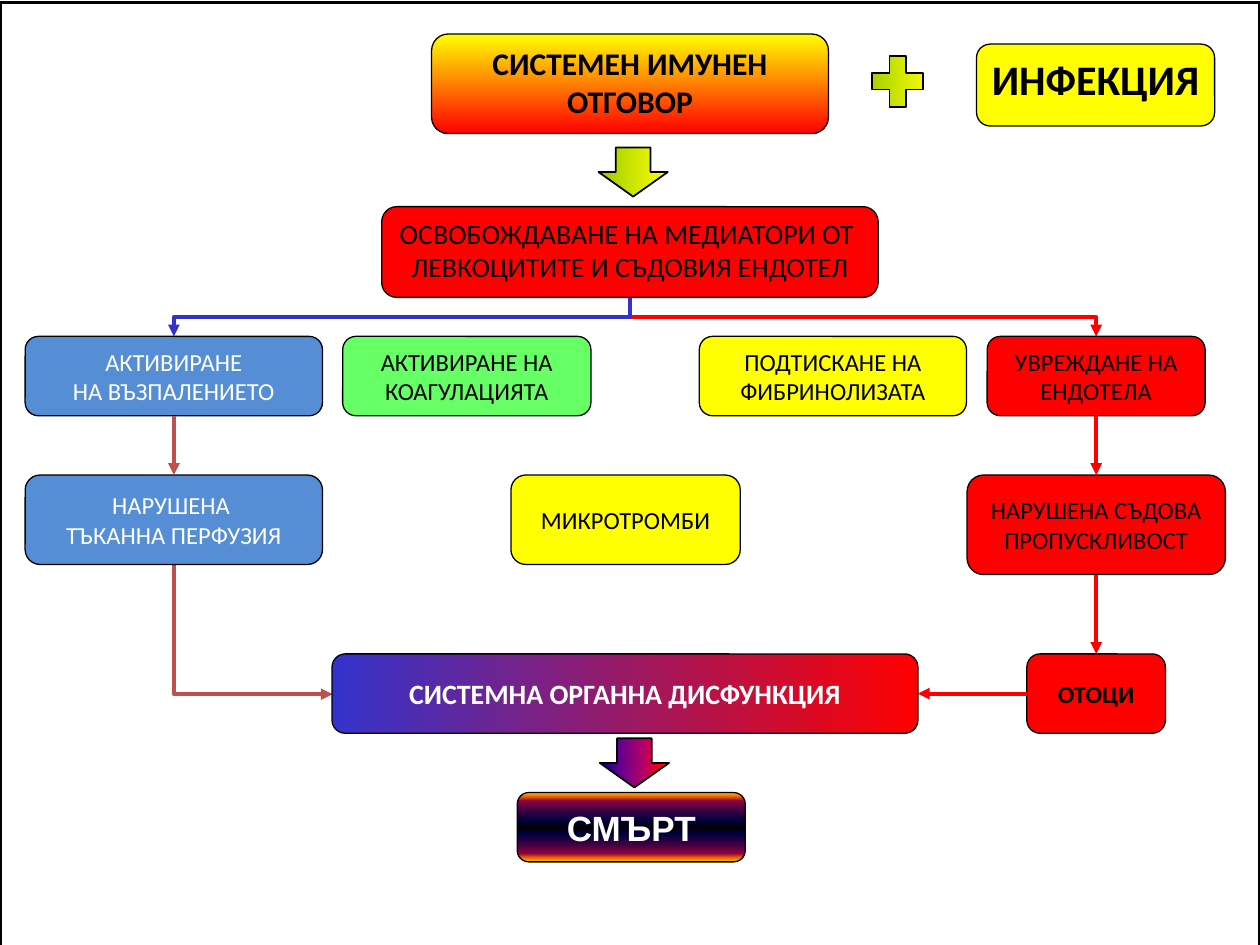
import pptx
import pptx.util
import pptx.dml.color
import pptx.enum.shapes
import pptx.enum.text
import pptx.oxml.ns
import lxml.etree

KIND = pptx.enum.shapes.MSO_SHAPE
LINK = pptx.enum.shapes.MSO_CONNECTOR
ALIGN = pptx.enum.text.PP_ALIGN
ANCHOR = pptx.enum.text.MSO_ANCHOR
qn = pptx.oxml.ns.qn

BLACK, WHITE, RED, YELLOW = "000000", "FFFFFF", "FF0000", "FFFF00"
BLUE, GREEN, INDIGO, BRICK = "558ED5", "66FF66", "3333CC", "C0504D"
LIME = [(0, "99CC00"), (100, YELLOW)]
FLAME = [(0, YELLOW), (100, RED)]
FAIL = [(0, INDIGO), (100, RED)]
DUSK = [(0, "000082"), (30, "66008F"), (65, "BA0066"), (90, RED), (100, "FF8200")]
EDGE = [(0, "FFBF00"), (5, "F27300"), (12, "8F0040"), (25, "400040"), (40, "000040")]
DEATH = EDGE + [(50, BLACK)] + [(100 - at, tone) for at, tone in reversed(EDGE)]


def color(code):
    return pptx.dml.color.RGBColor.from_string(code)


class Chart:
    """Flow chart on a grid of 100 columns by 75 rows."""

    def __init__(self, deck):
        self.slide = deck.slides.add_slide(deck.slide_layouts[6])
        self.shapes = self.slide.shapes
        self.cell = deck.slide_width / 100

    def grid(self, *marks):
        return [round(mark * self.cell) for mark in marks]

    def paint(self, shape, fill, down=False):
        if fill is None:
            shape.fill.background()
        elif isinstance(fill, str):
            shape.fill.solid()
            shape.fill.fore_color.rgb = color(fill)
        else:
            shape.fill.gradient()
            shape.fill.gradient_angle = 270 if down else 0
            stops = shape._element.spPr.find(".//" + qn("a:gsLst"))
            for old in list(stops):
                stops.remove(old)
            for at, tone in fill:
                stop = lxml.etree.SubElement(stops, qn("a:gs"), pos=str(at * 1000))
                lxml.etree.SubElement(stop, qn("a:srgbClr"), val=tone)

    def shape(self, kind, mid, top, wide, high, fill, width=1, down=False):
        item = self.shapes.add_shape(kind, *self.grid(mid - wide / 2, top, wide, high))
        item.shadow.inherit = False
        self.paint(item, fill, down)
        item.line.width = pptx.util.Pt(width)
        item.line.color.rgb = color(BLACK)
        return item

    def box(self, text, mid, top, wide, high, fill, ink=BLACK, size=14,
            bold=False, font="Calibri", head=False, down=False):
        item = self.shape(KIND.ROUNDED_RECTANGLE, mid, top, wide, high, fill, 0.75, down)
        frame = item.text_frame
        frame.word_wrap = head
        frame.vertical_anchor = ANCHOR.TOP if head else ANCHOR.MIDDLE
        side, edge = self.grid(0.4, 0.4) if head else (0, 0)
        frame.margin_left = frame.margin_right = side
        frame.margin_top = frame.margin_bottom = edge
        frame.text = text
        for para in frame.paragraphs:
            para.alignment = ALIGN.CENTER
            para.font.name = font
            para.font.size = pptx.util.Pt(size)
            para.font.bold = bold
            para.font.color.rgb = color(ink)
        return item

    def style(self, link, tone):
        link.line.width = pptx.util.Pt(2.25)
        link.line.color.rgb = color(tone)
        line = link.line._get_or_add_ln()
        lxml.etree.SubElement(line, qn("a:tailEnd"), type="triangle")
        lxml.etree.SubElement(link._element.spPr, qn("a:effectLst"))

    def arrow(self, start, end, tone, out=2, into=0):
        link = self.shapes.add_connector(LINK.STRAIGHT, 0, 0, 0, 0)
        link.begin_connect(start, out)
        link.end_connect(end, into)
        self.style(link, tone)

    def elbow(self, x1, y1, x2, y2, tone, corner=False):
        """Leave downwards: draw the path sideways, then turn it by 90 degrees."""
        x, y = (x1 + x2) / 2, (y1 + y2) / 2
        dx, dy = (x2 - x1) / 2, (y2 - y1) / 2
        link = self.shapes.add_connector(
            LINK.ELBOW, *self.grid(x - dy, y + dx, x + dy, y - dx))
        link._element.spPr.find(qn("a:xfrm")).set("rot", "5400000")
        if corner:
            link._element.spPr.find(qn("a:prstGeom")).set("prst", "bentConnector2")
        self.style(link, tone)


def main():
    deck = pptx.Presentation()
    deck.slide_width = pptx.util.Inches(10)
    deck.slide_height = pptx.util.Inches(7.5)
    chart = Chart(deck)
    left, mid, right = 13.8, 50, 87
    row1, row2, row3 = 26.7, 37.7, 51.9

    # Frame
    chart.shape(KIND.RECTANGLE, mid, 0.2, 100, 75, None, 2.25)

    # Branches from the mediators, and the corner into organ failure
    chart.elbow(mid, 23.6, right, row1, RED)
    chart.elbow(mid, 23.6, left, row1, INDIGO)
    chart.elbow(left, 44.8, 26.4, 55.1, BRICK, corner=True)

    # Causes
    chart.box("ИНФЕКЦИЯ", 86.95, 3.5, 18.9, 6.5, YELLOW, size=24, bold=True, head=True)
    chart.box("СИСТЕМЕН ИМУНЕН ОТГОВОР", mid, 2.7, 31.5, 7.9, FLAME,
              size=18, bold=True, head=True, down=True)
    chart.box("ОСВОБОЖДАВАНЕ НА МЕДИАТОРИ ОТ \nЛЕВКОЦИТИТЕ И СЪДОВИЯ ЕНДОТЕЛ",
              mid, 16.4, 39.4, 7.2, RED, size=16, head=True)

    # Four effects
    flame = chart.box("АКТИВИРАНЕ\nНА ВЪЗПАЛЕНИЕТО", left, row1, 23.6, 6.3, BLUE, WHITE)
    chart.box("АКТИВИРАНЕ НА\nКОАГУЛАЦИЯТА", 37.05, row1, 19.7, 6.3, GREEN)
    chart.box("ПОДТИСКАНЕ НА\nФИБРИНОЛИЗАТА", 66.1, row1, 21.2, 6.3, YELLOW)
    harm = chart.box("УВРЕЖДАНЕ НА\nЕНДОТЕЛА", right, row1, 17.3, 6.3, RED)

    # Their results
    flow = chart.box("НАРУШЕНА \nТЪКАННА ПЕРФУЗИЯ", left, row2, 23.6, 7.1, BLUE, WHITE)
    chart.box("МИКРОТРОМБИ", 49.65, row2, 18.2, 7.1, YELLOW)
    leak = chart.box("НАРУШЕНА СЪДОВА\nПРОПУСКЛИВОСТ", right, row2, 20.5, 7.9, RED)

    # Outcome
    fail = chart.box("СИСТЕМНА ОРГАННА ДИСФУНКЦИЯ", 49.6, row3, 46.5, 6.3, FAIL,
                     WHITE, 16, True)
    swell = chart.box("ОТОЦИ", right, row3, 11, 6.3, RED, bold=True)
    chart.box("СМЪРТ", 50.1, 62.9, 18.1, 5.5, DEATH, WHITE, 20, True, "Arial", down=True)

    # Straight arrows
    chart.arrow(flame, flow, BRICK)
    chart.arrow(harm, leak, RED)
    chart.arrow(leak, swell, RED)
    chart.arrow(swell, fail, RED, out=1, into=3)

    # Block arrows and plus sign
    chart.shape(KIND.DOWN_ARROW, 50.25, 11.7, 5.5, 3.9, LIME)
    chart.shape(KIND.MATH_PLUS, 71.25, 3.7, 5.5, 5.5, LIME)
    chart.shape(KIND.DOWN_ARROW, 50.35, 58.6, 5.5, 3.9, DUSK)

    deck.save("out.pptx")


if __name__ == "__main__":
    main()
